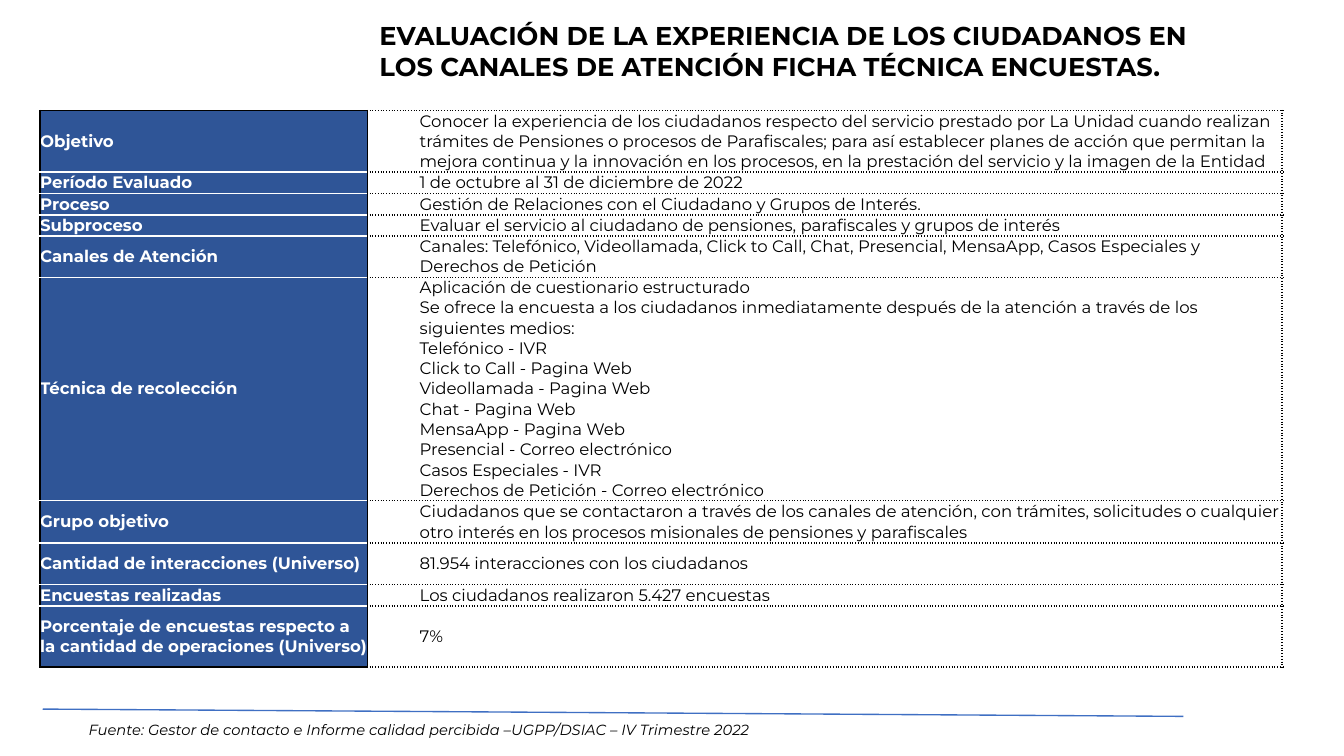
"""Build the survey fact sheet slide."""
from lxml import etree
from pptx import Presentation
from pptx.dml.color import RGBColor
from pptx.enum.shapes import MSO_CONNECTOR
from pptx.enum.text import MSO_ANCHOR
from pptx.oxml.ns import qn
from pptx.util import Cm, Pt

MIDDLE = MSO_ANCHOR.MIDDLE
STRAIGHT = MSO_CONNECTOR.STRAIGHT
COLORS = {"ink": "000000", "paper": "FFFFFF", "label": "2F5597", "rule": "3F6FC3"}

TITLE = ("EVALUACIÓN DE LA EXPERIENCIA DE LOS CIUDADANOS EN LOS CANALES "
         "DE ATENCIÓN FICHA TÉCNICA ENCUESTAS.")
SOURCE = ("Fuente: Gestor de contacto e Informe calidad percibida "
          "–UGPP/DSIAC – IV Trimestre 2022")
METHODS = "\n".join([
    "Aplicación de cuestionario estructurado",
    "Se ofrece la encuesta a los ciudadanos inmediatamente después de la "
    "atención a través de los siguientes medios:",
    "Telefónico - IVR",
    "Click to Call - Pagina Web",
    "Videollamada - Pagina Web",
    "Chat - Pagina Web",
    "MensaApp - Pagina Web",
    "Presencial - Correo electrónico",
    "Casos Especiales - IVR",
    "Derechos de Petición - Correo electrónico",
])
ROWS = [
    (1.18, "Objetivo",
     "Conocer la experiencia de los ciudadanos respecto del servicio prestado por "
     "La Unidad cuando realizan trámites de Pensiones o procesos de Parafiscales; "
     "para así establecer planes de acción que permitan la mejora continua y la "
     "innovación en los procesos, en la prestación del servicio y la imagen de la "
     "Entidad"),
    (0.41, "Período Evaluado", "1 de octubre al 31 de diciembre de 2022"),
    (0.41, "Proceso", "Gestión de Relaciones con el Ciudadano y Grupos de Interés."),
    (0.41, "Subproceso",
     "Evaluar el servicio al ciudadano de pensiones, parafiscales y grupos de interés"),
    (0.79, "Canales de Atención",
     "Canales: Telefónico, Videollamada, Click to Call, Chat, Presencial, MensaApp, "
     "Casos Especiales y Derechos de Petición"),
    (4.28, "Técnica de recolección", METHODS),
    (0.82, "Grupo objetivo",
     "Ciudadanos que se contactaron a través de los canales de atención, con "
     "trámites, solicitudes o cualquier otro interés en los procesos misionales de "
     "pensiones y parafiscales"),
    (0.79, "Cantidad de interacciones (Universo)",
     "81.954 interacciones con los ciudadanos"),
    (0.41, "Encuestas realizadas", "Los ciudadanos realizaron 5.427 encuestas"),
    (1.17, "Porcentaje de encuestas respecto a la cantidad de operaciones (Universo)",
     "7%"),
]


class Sheet:
    """Hold the style and the current slide."""

    def __init__(self, slide, font="Montserrat"):
        self.slide = slide
        self.font = font

    def color(self, name):
        return RGBColor.from_string(COLORS[name])

    def fill_in(self, frame, text, size, color="ink", bold=False, italic=False):
        frame.text = text
        frame.word_wrap = True
        for para in frame.paragraphs:
            for run in para.runs:
                font = run.font
                font.name, font.size = self.font, Pt(size)
                font.bold, font.italic = bold, italic
                font.color.rgb = self.color(color)

    def text(self, box, text, size, **style):
        shape = self.slide.shapes.add_textbox(*map(Cm, box))
        self.fill_in(shape.text_frame, text, size, **style)

    def line(self, ends, color, width):
        line = self.slide.shapes.add_connector(STRAIGHT, *map(Cm, ends))
        line.line.color.rgb = self.color(color)
        line.line.width = Pt(width)
        props = line._element.spPr
        etree.SubElement(props, qn("a:effectLst"))

    def border(self, cell, edges):
        props = cell._tc.get_or_add_tcPr()
        for spot, (side, (color, dash)) in enumerate(zip("LRTB", edges)):
            edge = etree.Element(qn("a:ln" + side), w=str(Pt(1)))
            fill = etree.SubElement(edge, qn("a:solidFill"))
            etree.SubElement(fill, qn("a:srgbClr"), val=COLORS[color])
            etree.SubElement(edge, qn("a:prstDash"), val=dash)
            props.insert(spot, edge)

    def cell(self, cell, text, fill, edges, **style):
        cell.margin_left = cell.margin_right = 0
        cell.margin_top = cell.margin_bottom = 0
        cell.vertical_anchor = MIDDLE
        cell.fill.solid()
        cell.fill.fore_color.rgb = self.color(fill)
        self.fill_in(cell.text_frame, text, 9, **style)
        self.border(cell, edges)

    def table(self, left, top, widths, rows):
        high = sum(row[0] for row in rows)
        box = map(Cm, (left, top, sum(widths), high))
        table = self.slide.shapes.add_table(len(rows), len(widths), *box).table
        table.first_row = table.horz_banding = False
        for col, width in zip(table.columns, widths):
            col.width = Cm(width)
        solid, white, dots = ("ink", "solid"), ("paper", "solid"), ("ink", "sysDot")
        last = len(rows) - 1
        for i, (height, label, value) in enumerate(rows):
            table.rows[i].height = Cm(height)
            above = solid if i == 0 else white
            below = solid if i == last else white
            self.cell(table.cell(i, 0), label, "label",
                      (solid, solid, above, below), color="paper", bold=True)
            cell = table.cell(i, 1)
            self.cell(cell, value, "paper", (solid, dots, dots, dots))
            for para in cell.text_frame.paragraphs:
                props = para._p.get_or_add_pPr()
                props.set("marL", str(Cm(1)))
                props.set("indent", "0")


def main():
    deck = Presentation()
    deck.slide_width, deck.slide_height = Cm(25.78), Cm(14.5)
    sheet = Sheet(deck.slides.add_slide(deck.slide_layouts[6]))
    sheet.table(0.77, 2.12, (6.28, 17.54), ROWS)
    sheet.text((7.03, 0.25, 17.07, 1.45), TITLE, 14, bold=True)
    sheet.text((1.45, 13.71, 18.5, 0.6), SOURCE, 8, italic=True)
    sheet.line((0.82, 13.6, 22.7, 13.74), "rule", 0.75)
    deck.save("out.pptx")


if __name__ == "__main__":
    main()
